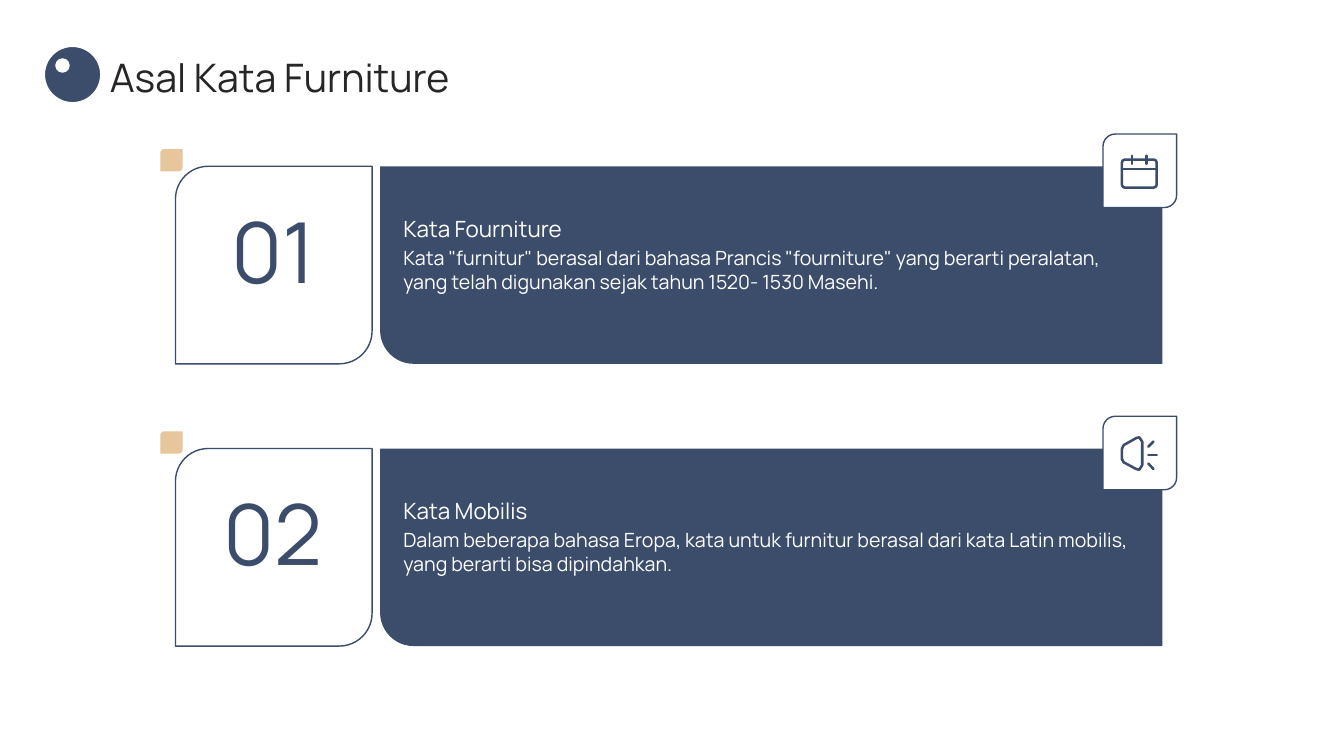
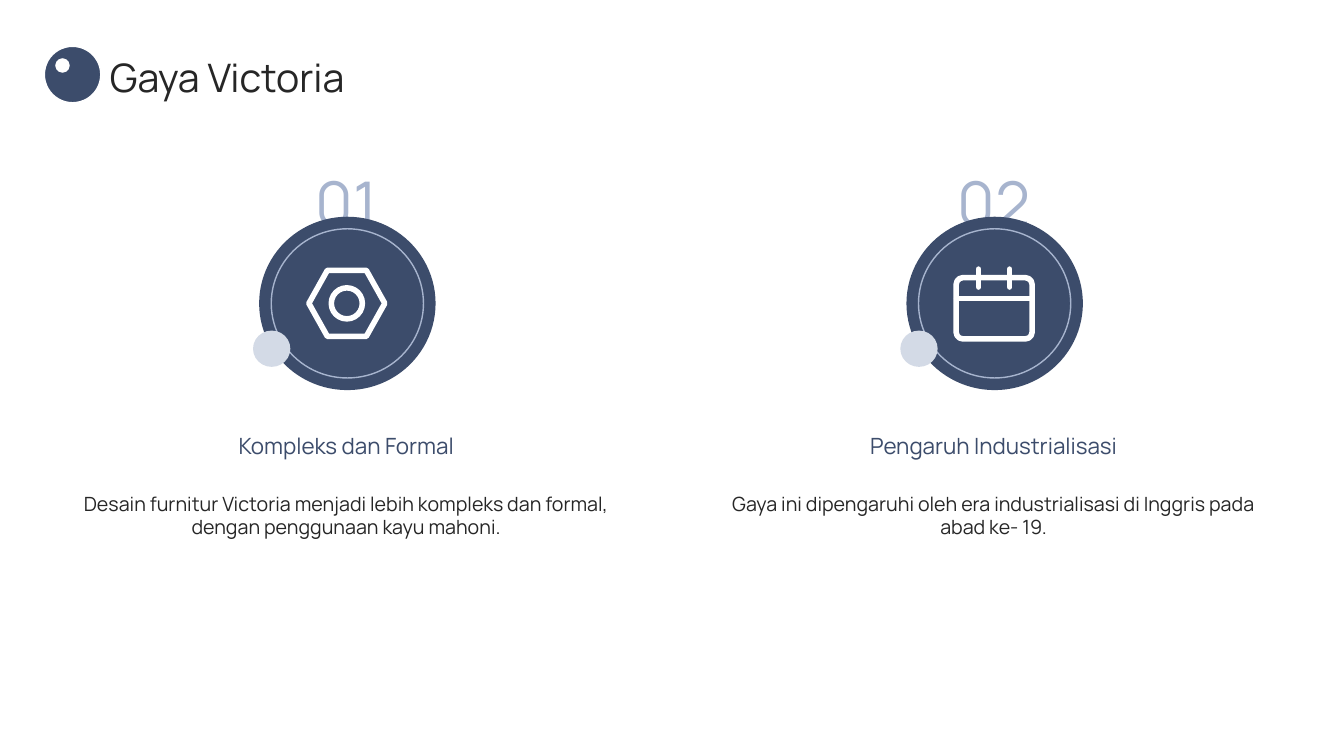
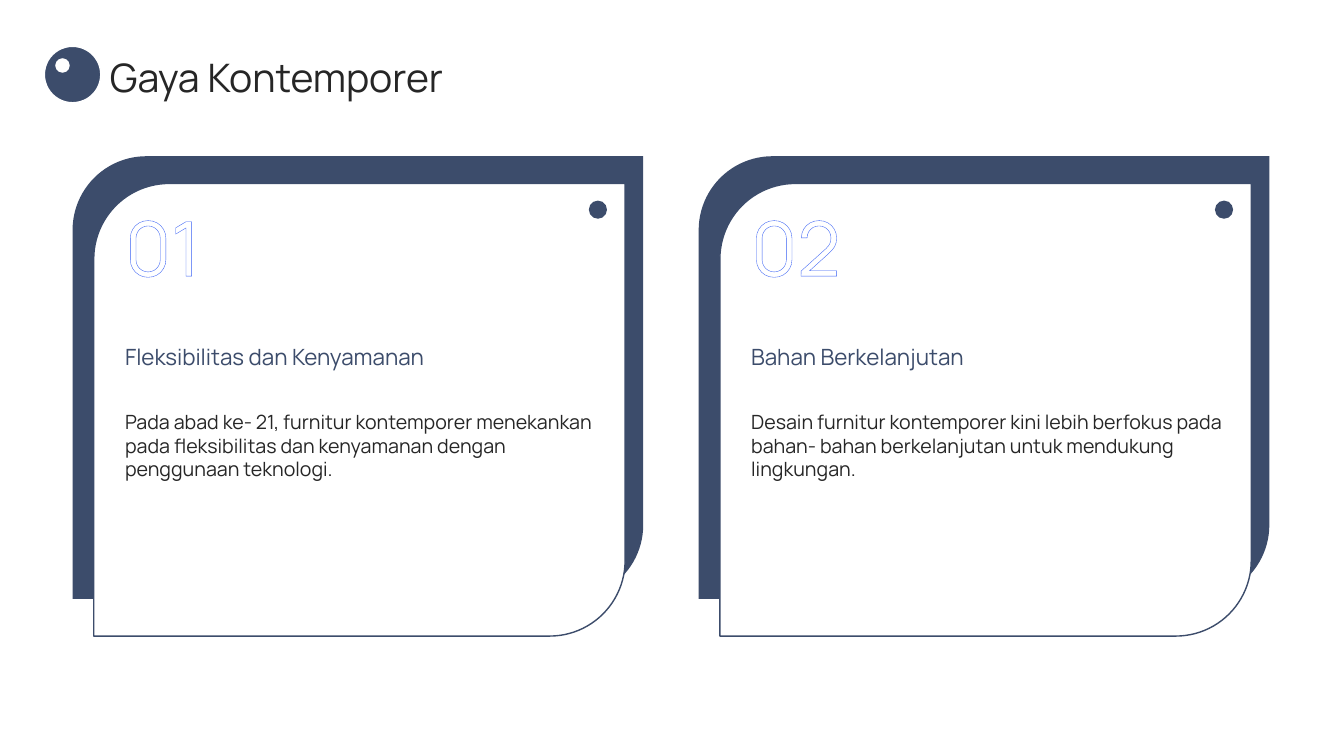
from lxml import etree
from pptx import Presentation
from pptx.dml.color import RGBColor
from pptx.enum import shapes, text
from pptx.oxml import ns
from pptx.util import Inches, Pt

# Shared style
FONT = "Manrope"
NAVY = RGBColor(0x3C, 0x4C, 0x6B)
WHITE = RGBColor(0xFF, 0xFF, 0xFF)
INK = RGBColor(0x26, 0x26, 0x26)
SAND = RGBColor(0xE6, 0xC6, 0x9A)
MIST = RGBColor(0xA7, 0xB4, 0xCE)
PALE = RGBColor(0xD3, 0xDA, 0xE6)
BLUE = RGBColor(0x38, 0x60, 0xF4)

LEFT, CENTER = text.PP_ALIGN.LEFT, text.PP_ALIGN.CENTER
TOP, MIDDLE, BOTTOM = (text.MSO_ANCHOR.TOP, text.MSO_ANCHOR.MIDDLE,
                       text.MSO_ANCHOR.BOTTOM)
OVAL = shapes.MSO_SHAPE.OVAL
LEAF = shapes.MSO_SHAPE.ROUND_2_DIAG_RECTANGLE

# Content: title, then (heading, body, icon) for each item
ORIGIN = ("Asal Kata Furniture", [
    ("Kata Fourniture",
     'Kata "furnitur" berasal dari bahasa Prancis "fourniture" yang berarti '
     "peralatan, yang telah digunakan sejak tahun 1520- 1530 Masehi.",
     "calendar"),
    ("Kata Mobilis",
     "Dalam beberapa bahasa Eropa, kata untuk furnitur berasal dari kata "
     "Latin mobilis, yang berarti bisa dipindahkan.",
     "speaker"),
])
VICTORIAN = ("Gaya Victoria", [
    ("Kompleks dan Formal",
     "Desain furnitur Victoria menjadi lebih kompleks dan formal, dengan "
     "penggunaan kayu mahoni.",
     "nut"),
    ("Pengaruh Industrialisasi",
     "Gaya ini dipengaruhi oleh era industrialisasi di Inggris pada abad "
     "ke- 19.",
     "calendar"),
])
CONTEMPORARY = ("Gaya Kontemporer", [
    ("Fleksibilitas dan Kenyamanan",
     "Pada abad ke- 21, furnitur kontemporer menekankan pada fleksibilitas "
     "dan kenyamanan dengan penggunaan teknologi.",
     None),
    ("Bahan Berkelanjutan",
     "Desain furnitur kontemporer kini lebih berfokus pada bahan- bahan "
     "berkelanjutan untuk mendukung lingkungan.",
     None),
])

# Icon geometry, as fractions of the icon width
STROKE = 0.068
SPEAKER_CONE = [(0.035, 0.35), (0.08, 0.25), (0.42, 0.06), (0.5, 0.04),
                (0.58, 0.16), (0.58, 0.78), (0.5, 0.91), (0.42, 0.89),
                (0.08, 0.71), (0.035, 0.62)]
SPEAKER_RAYS = [(0.74, 0.29, 0.88, 0.15), (0.74, 0.51, 0.97, 0.51),
                (0.74, 0.74, 0.88, 0.89)]
CALENDAR_LINES = [(0.04, 0.4, 0.96, 0.4), (0.31, 0.04, 0.31, 0.26),
                  (0.69, 0.04, 0.69, 0.26)]


# Basic parts
def paint(shape, fill=None, line=None, weight=1):
    shape.shadow.inherit = False
    if fill is None:
        shape.fill.background()
    else:
        shape.fill.solid()
        shape.fill.fore_color.rgb = fill
    if line is None:
        shape.line.fill.background()
    else:
        shape.line.color.rgb = line
        shape.line.width = Pt(weight)


def add_shape(slide, preset, box, fill=None, line=None, weight=1):
    shape = slide.shapes.add_shape(preset, *map(Inches, box))
    paint(shape, fill, line, weight)
    return shape


def write(shape, box, words, size, color=None, align=LEFT, anchor=TOP):
    shape.left, shape.top, shape.width, shape.height = map(Inches, box)
    frame = shape.text_frame
    frame.word_wrap = True
    frame.auto_size = text.MSO_AUTO_SIZE.NONE
    frame.vertical_anchor = anchor
    frame.margin_left = frame.margin_right = 0
    frame.margin_top = frame.margin_bottom = 0
    paragraph = frame.paragraphs[0]
    paragraph.alignment = align
    run = paragraph.add_run()
    run.text = words
    run.font.name = FONT
    run.font.size = Pt(size)
    if color is not None:
        run.font.color.rgb = color
    return run


def add_text(slide, box, *style, **options):
    return write(slide.shapes.add_textbox(0, 0, 0, 0), box, *style, **options)


def outline_text(run):
    line = etree.Element(ns.qn("a:ln"), w=str(Pt(1.25)))
    fill = etree.SubElement(line, ns.qn("a:solidFill"))
    etree.SubElement(fill, ns.qn("a:srgbClr"), val=str(BLUE))
    run.font._element.insert(0, line)


def fade_text(run, start, end):
    run.font.fill.gradient()
    run.font.fill.gradient_angle = 270
    for stop, color in zip(run.font.fill.gradient_stops, (start, end)):
        stop.color.rgb = color


# Icons
def round_stroke(shape):
    line = shape.line._get_or_add_ln()
    line.set("cap", "rnd")
    etree.SubElement(line, ns.qn("a:round"))


def add_strokes(slide, strokes, left, top, width, color):
    for x1, y1, x2, y2 in strokes:
        stroke = slide.shapes.add_connector(
            shapes.MSO_CONNECTOR.STRAIGHT,
            Inches(left + x1 * width), Inches(top + y1 * width),
            Inches(left + x2 * width), Inches(top + y2 * width))
        stroke.line.color.rgb = color
        stroke.line.width = Pt(STROKE * width * 72)
        round_stroke(stroke)
        etree.SubElement(stroke._element.spPr, ns.qn("a:effectLst"))


def add_icon(slide, kind, center_x, center_y, width, color):
    weight = STROKE * width * 72
    left = center_x - width / 2

    def outline(preset, x, y, w, h):
        box = (left + x * width, top + y * width, w * width, h * width)
        return add_shape(slide, preset, box, line=color, weight=weight)

    if kind == "calendar":
        top = center_y - 0.46 * width
        body = outline(shapes.MSO_SHAPE.ROUNDED_RECTANGLE,
                       0.035, 0.145, 0.93, 0.75)
        body.adjustments[0] = 0.11
        add_strokes(slide, CALENDAR_LINES, left, top, width, color)
    elif kind == "speaker":
        top = center_y - 0.475 * width
        points = [(Inches(left + x * width), Inches(top + y * width))
                  for x, y in SPEAKER_CONE]
        builder = slide.shapes.build_freeform(*points[0])
        builder.add_line_segments(points[1:], close=True)
        cone = builder.convert_to_shape()
        paint(cone, line=color, weight=weight)
        round_stroke(cone)
        add_strokes(slide, SPEAKER_RAYS, left, top, width, color)
    else:
        top = center_y - 0.44 * width
        nut = outline(shapes.MSO_SHAPE.HEXAGON, 0.035, 0.035, 0.93, 0.81)
        nut.adjustments[0] = 0.28
        round_stroke(nut)
        outline(OVAL, 0.31, 0.25, 0.38, 0.38)


# Slide frame: title and round badge
def start_slide(presentation, title):
    slide = presentation.slides.add_slide(presentation.slide_layouts[5])
    write(slide.shapes.title, (1.09, 0.51, 11.88, 0.51), title, 28, INK,
          anchor=MIDDLE)
    add_shape(slide, OVAL, (0.44, 0.46, 0.56, 0.56), NAVY, WHITE)
    add_shape(slide, OVAL, (0.54, 0.57, 0.16, 0.16), WHITE, NAVY)
    return slide


# Slide bodies
def add_origin_row(slide, index, heading, body, icon):
    top = 1.65 + 2.8 * index
    add_shape(slide, LEAF, (1.74, top, 1.95, 1.96), WHITE, NAVY)
    band = add_shape(slide, LEAF, (3.77, top, 7.76, 1.96), NAVY)
    band.adjustments[0], band.adjustments[1] = 0, 0.17
    add_text(slide, (4, top + 0.79, 7.3, 0.99), body, 14, WHITE)
    add_shape(slide, LEAF, (10.94, top - 0.32, 0.73, 0.73), WHITE, NAVY)
    add_icon(slide, icon, 11.3, top + 0.05, 0.37, NAVY)
    number = add_text(slide, (1.94, top + 0.33, 1.54, 1.2),
                      f"{index + 1:02}", 60, NAVY, align=CENTER)
    outline_text(number)
    add_shape(slide, LEAF, (1.59, top - 0.17, 0.22, 0.22), SAND)
    add_text(slide, (4, top + 0.35, 7.3, 0.4), heading, 16, WHITE,
             anchor=BOTTOM)


def add_victorian_column(slide, index, heading, body, icon):
    left = 0.72 + 6.42 * index
    number = add_text(slide, (left + 2.19, 1.66, 1.06, 0.69),
                      f"{index + 1:02}", 44, align=CENTER, anchor=MIDDLE)
    fade_text(number, MIST, WHITE)
    add_shape(slide, OVAL, (left + 1.85, 2.15, 1.75, 1.72), NAVY)
    add_shape(slide, OVAL, (left + 1.97, 2.27, 1.51, 1.48), NAVY, MIST)
    add_icon(slide, icon, left + 2.72, 3.01, 0.81, WHITE)
    add_shape(slide, OVAL, (left + 1.79, 3.28, 0.37, 0.36), PALE)
    add_text(slide, (left, 4.88, 5.43, 1.44), body, 14, INK, align=CENTER)
    add_text(slide, (left, 3.97, 5.43, 0.91), heading, 16, NAVY,
             align=CENTER, anchor=MIDDLE)


def add_contemporary_card(slide, index, heading, body, icon):
    left = 0.72 + 6.21 * index
    add_shape(slide, LEAF, (left, 1.55, 5.66, 4.39), NAVY)
    add_shape(slide, LEAF, (left + 0.21, 1.82, 5.27, 4.49), WHITE, NAVY)
    number = add_text(slide, (left + 0.52, 1.99, 1.35, 1.16),
                      f"{index + 1:02}", 54, WHITE)
    outline_text(number)
    add_text(slide, (left + 0.52, 4.07, 4.69, 1.82), body, 14, INK)
    add_shape(slide, OVAL, (left + 5.12, 1.99, 0.18, 0.18), NAVY)
    add_text(slide, (left + 0.52, 3.04, 4.69, 0.99), heading, 16, NAVY,
             anchor=MIDDLE)


def main():
    presentation = Presentation()
    presentation.slide_width = Inches(13.33)
    presentation.slide_height = Inches(7.5)
    for (title, items), add_item in (
            (ORIGIN, add_origin_row),
            (VICTORIAN, add_victorian_column),
            (CONTEMPORARY, add_contemporary_card)):
        slide = start_slide(presentation, title)
        for index, item in enumerate(items):
            add_item(slide, index, *item)
    presentation.save("out.pptx")


if __name__ == "__main__":
    main()
